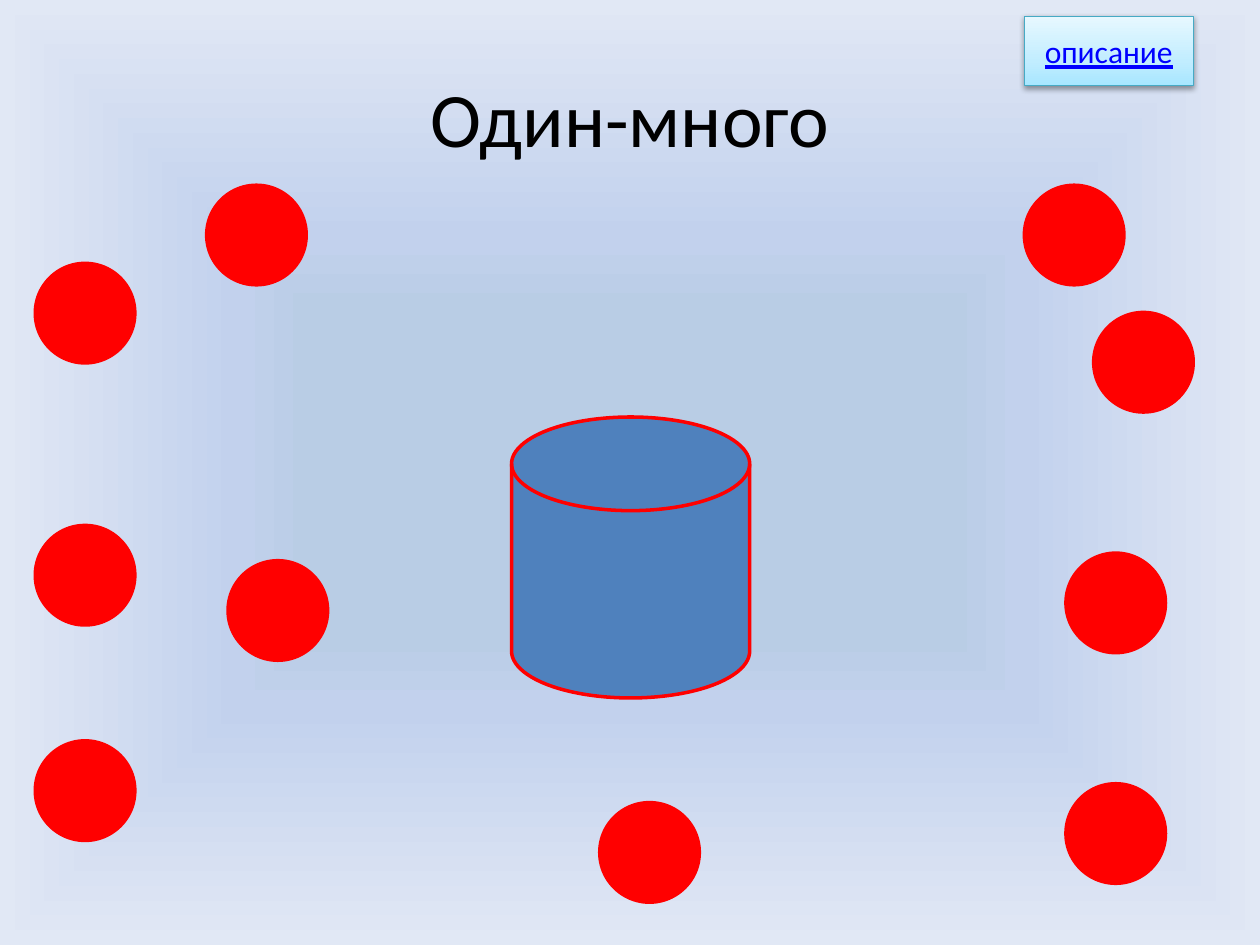
import dataclasses
import lxml.etree
import pptx
import pptx.dml.color
import pptx.enum.shapes
import pptx.enum.text
import pptx.oxml
import pptx.oxml.ns
import pptx.util

COLS, ROWS = 100, 75
SHAPE = pptx.enum.shapes.MSO_SHAPE


@dataclasses.dataclass(frozen=True)
class Theme:
    font: str = "Calibri"
    title_size: float = 44
    button_size: float = 18
    ball_line: float = 2
    button_line: float = 0.75
    text: str = "000000"
    link: str = "0000FF"
    red: str = "FF0000"
    drum: str = "4F81BD"
    button_edge: str = "46AAC5"
    shadow: str = "000000"
    backdrop: tuple = ((34, "B9CDE5"), (50, "C2D1ED"), (100, "E1E8F5"))
    button: tuple = ((0, "A7E6FF"), (35, "C1EDFF"), (100, "E7F8FF"))


@dataclasses.dataclass(frozen=True)
class Box:
    x: float
    y: float
    w: float
    h: float

    def inner(self, x, y, w, h):
        return Box(self.x + x, self.y + y, w, h)

    def emu(self):
        return [pptx.util.Inches(v / 10) for v in (self.x, self.y, self.w, self.h)]


THEME = Theme()


def rgb(value):
    return pptx.dml.color.RGBColor.from_string(value)


def set_gradient(fill, owner, stops, direction):
    fill.gradient()
    old = next(owner.iter(pptx.oxml.ns.qn("a:gradFill")))
    stops_xml = "".join(
        f'<a:gs pos="{pos * 1000}"><a:srgbClr val="{color}"/></a:gs>'
        for pos, color in stops
    )
    new = pptx.oxml.parse_xml(
        f'<a:gradFill {pptx.oxml.ns.nsdecls("a")} rotWithShape="1">'
        f"<a:gsLst>{stops_xml}</a:gsLst>{direction}</a:gradFill>"
    )
    old.getparent().replace(old, new)


def add_figure(s, kind, box, fill, line, width):
    sp = s.shapes.add_shape(kind, *box.emu())
    sp.shadow.inherit = False
    if fill:
        sp.fill.solid()
        sp.fill.fore_color.rgb = rgb(fill)
    sp.line.color.rgb = rgb(line)
    sp.line.width = pptx.util.Pt(width)
    return sp


def write(sp, text, size, color, underline=False):
    tf = sp.text_frame
    tf.word_wrap = True
    tf.vertical_anchor = pptx.enum.text.MSO_ANCHOR.MIDDLE
    p = tf.paragraphs[0]
    p.alignment = pptx.enum.text.PP_ALIGN.CENTER
    r = p.add_run()
    r.text = text
    r.font.name = THEME.font
    r.font.size = pptx.util.Pt(size)
    r.font.color.rgb = rgb(color)
    r.font.underline = underline


def draw_backdrop(s):
    center = (
        '<a:path path="rect"><a:fillToRect l="50000" t="50000" '
        'r="50000" b="50000"/></a:path>'
    )
    set_gradient(s.background.fill, s.element, THEME.backdrop, center)


def draw_title(s, box):
    sp = s.shapes.add_textbox(*box.emu())
    write(sp, "Один-много", THEME.title_size, THEME.text)


def draw_balls(s, box):
    size = 7.9
    left, right = 2.8, 84.6
    places = [
        (left, 20.9), (left, 41.7), (left, 58.8),
        (16.4, 14.7), (18.1, 44.5), (47.6, 63.7),
        (81.3, 14.7), (86.8, 24.8), (right, 43.9), (right, 62.2),
    ]
    for x, y in places:
        ball = box.inner(x, y, size, size)
        add_figure(s, SHAPE.OVAL, ball, THEME.red, THEME.red, THEME.ball_line)


def draw_drum(s, box):
    add_figure(s, SHAPE.FLOWCHART_MAGNETIC_DISK, box,
               THEME.drum, THEME.red, THEME.ball_line)


def draw_button(s, box):
    sp = add_figure(s, SHAPE.FLOWCHART_PROCESS, box,
                    None, THEME.button_edge, THEME.button_line)
    upward = '<a:lin ang="16200000" scaled="0"/>'
    set_gradient(sp.fill, sp.element.spPr, THEME.button, upward)
    effects = sp.element.spPr.find(pptx.oxml.ns.qn("a:effectLst"))
    shadow = lxml.etree.SubElement(
        effects, pptx.oxml.ns.qn("a:outerShdw"),
        blurRad="40000", dist="20000", dir="5400000", rotWithShape="0")
    color = lxml.etree.SubElement(
        shadow, pptx.oxml.ns.qn("a:srgbClr"), val=THEME.shadow)
    lxml.etree.SubElement(color, pptx.oxml.ns.qn("a:alpha"), val="38000")
    write(sp, "описание", THEME.button_size, THEME.link, underline=True)


def main():
    prs = pptx.Presentation()
    prs.slide_width = pptx.util.Inches(COLS / 10)
    prs.slide_height = pptx.util.Inches(ROWS / 10)
    s = prs.slides.add_slide(prs.slide_layouts[6])
    page = Box(0, 0, COLS, ROWS)
    draw_backdrop(s)
    draw_title(s, page.inner(5, 3, 90, 12.5))
    draw_balls(s, page)
    draw_drum(s, page.inner(40.6, 33.1, 18.9, 22.3))
    draw_button(s, page.inner(81.3, 1.3, 13.4, 5.5))
    prs.save("out.pptx")


if __name__ == "__main__":
    main()
